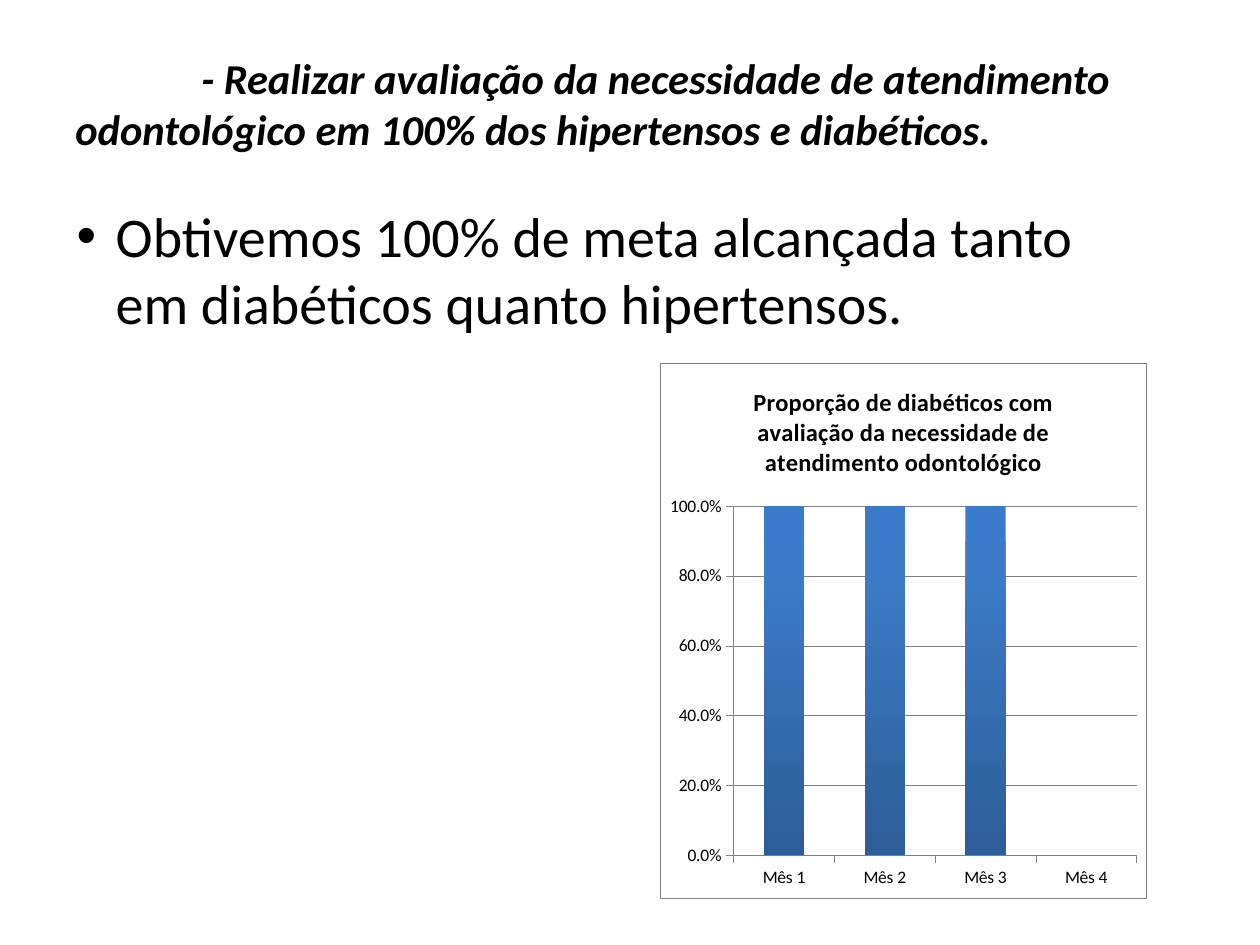
from pptx import Presentation
from pptx.chart.data import CategoryChartData
from pptx.dml.color import RGBColor
from pptx.enum.chart import XL_CHART_TYPE, XL_TICK_MARK
from pptx.enum.text import MSO_ANCHOR
from pptx.oxml import parse_xml
from pptx.oxml.ns import nsdecls
from pptx.util import Inches, Pt

HEAD = "- Realizar avaliação da necessidade de atendimento odontológico em 100% dos hipertensos e diabéticos."
BODY = "Obtivemos 100% de meta alcançada tanto em diabéticos quanto hipertensos."
NAME = "Proporção de diabéticos com avaliação da necessidade de atendimento odontológico"
DATA = {"Mês 1": 1, "Mês 2": 1, "Mês 3": 1, "Mês 4": 0}
THEME = {
    "font": "Calibri", "ink": "000000", "paper": "FFFFFF", "rule": "808080",
    "head": 24.3, "body": 32, "title": 14, "axis": 10, "line": 0.25,
    "grad": [(0, "3A7CCB"), (20, "3C7BC7"), (100, "2C5D98")],
}


def style(font, size, bold=False, italic=False):
    """Set the theme font at a given size."""
    font.name, font.size = THEME["font"], Pt(size)
    font.bold, font.italic = bold, italic
    font.color.rgb = RGBColor.from_string(THEME["ink"])


def add_text(slide, text, *, box, size, left=0, first=0, bullet=None,
             low=0.05, anchor=MSO_ANCHOR.TOP, **look):
    """Add a wrapped text box with one formatted paragraph."""
    frame = slide.shapes.add_textbox(*map(Inches, box)).text_frame
    frame.word_wrap = True
    frame.vertical_anchor = anchor
    frame.margin_bottom = Inches(low)
    para = frame.paragraphs[0]
    run = para.add_run()
    run.text = text
    style(run.font, size, **look)
    props = para._p.get_or_add_pPr()
    props.set("marL", str(Inches(left)))
    props.set("indent", str(Inches(first)))
    if bullet:
        props.append(parse_xml(f'<a:buFont {nsdecls("a")} typeface="Arial"/>'))
        props.append(parse_xml(f'<a:buChar {nsdecls("a")} char="{bullet}"/>'))


def rule(line):
    """Give a line the thin grey look."""
    line.color.rgb = RGBColor.from_string(THEME["rule"])
    line.width = Pt(THEME["line"])


def solid(color):
    """Return the XML of a solid fill."""
    return f'<a:solidFill><a:srgbClr val="{color}"/></a:solidFill>'


def area(border):
    """Return chart area properties with a paper fill and a border."""
    return parse_xml(f'<c:spPr {nsdecls("c", "a")}>{solid(THEME["paper"])}{border}</c:spPr>')


def shade(series):
    """Fill a series with the theme gradient from top to bottom."""
    stops = "".join(f'<a:gs pos="{pos * 1000}"><a:srgbClr val="{color}"/></a:gs>'
                    for pos, color in THEME["grad"])
    series.format.fill.background()
    props = series._element.spPr
    props.replace(props[0], parse_xml(
        f'<a:gradFill {nsdecls("a")} rotWithShape="1"><a:gsLst>{stops}</a:gsLst>'
        '<a:lin ang="5400000" scaled="0"/></a:gradFill>'))


def add_bars(slide, box):
    """Add the monthly column chart."""
    data = CategoryChartData(number_format="0.0%")
    data.categories = list(DATA)
    data.add_series(NAME, list(DATA.values()))
    chart = slide.shapes.add_chart(
        XL_CHART_TYPE.COLUMN_CLUSTERED, *map(Inches, box), data).chart
    style(chart.font, THEME["axis"])
    chart.has_legend = False
    chart.has_title = True
    frame = chart.chart_title.text_frame
    frame.text = NAME
    style(frame.paragraphs[0].runs[0].font, THEME["title"], bold=True)
    chart.chart_title.include_in_layout = False

    for axis in (chart.category_axis, chart.value_axis):
        axis.major_tick_mark = XL_TICK_MARK.OUTSIDE
        axis.minor_tick_mark = XL_TICK_MARK.NONE
        style(axis.tick_labels.font, THEME["axis"])
        rule(axis.format.line)
    axis = chart.value_axis
    axis.minimum_scale, axis.maximum_scale, axis.major_unit = 0, 1, 0.2
    axis.has_major_gridlines = True
    rule(axis.major_gridlines.format.line)
    axis.tick_labels.number_format = "0.0%"
    axis.tick_labels.number_format_is_linked = False

    plot = chart.plots[0]
    plot.gap_width, plot.vary_by_categories = 150, False
    shade(plot.series[0])
    root = chart._chartSpace.chart
    width = Pt(THEME["line"])
    root.addnext(area(f'<a:ln w="{width}">{solid(THEME["rule"])}</a:ln>'))
    root.plotArea.append(area("<a:ln><a:noFill/></a:ln>"))


def main():
    """Build the slide and save it."""
    deck = Presentation()
    deck.slide_width, deck.slide_height = Inches(10), Inches(7.5)
    slide = deck.slides.add_slide(deck.slide_layouts[6])
    add_text(slide, HEAD, box=(0.5, 0.3, 9, 1.25), size=THEME["head"], first=1,
             low=0.26, anchor=MSO_ANCHOR.MIDDLE, bold=True, italic=True)
    add_bars(slide, (5.24, 2.88, 3.86, 4.25))
    add_text(slide, BODY, box=(0.51, 1.55, 8.58, 1.48), size=THEME["body"],
             left=0.31, first=-0.31, bullet="•")
    deck.save("out.pptx")


if __name__ == "__main__":
    main()
